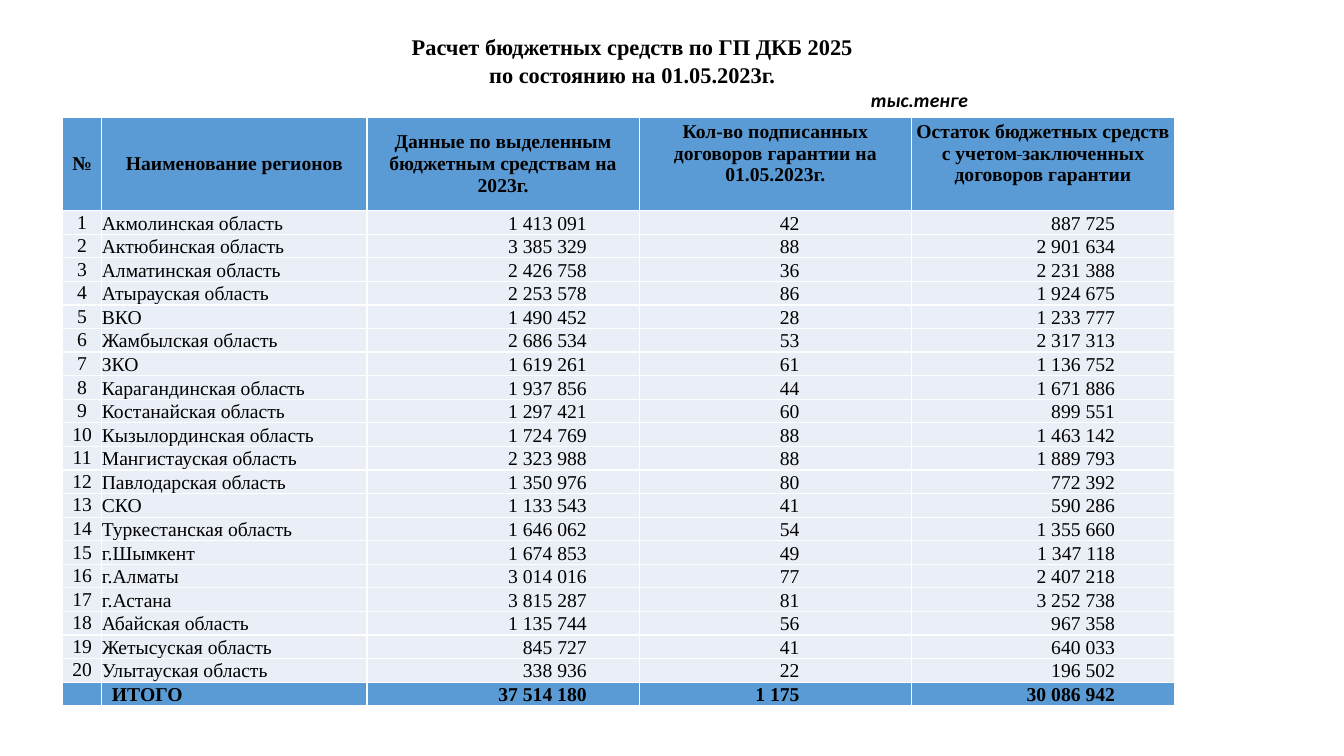
from lxml import etree
from pptx import Presentation
from pptx import util as u
from pptx.dml import color as c
from pptx.enum import text as t
from pptx.oxml import ns

SERIF = "Times New Roman"
BLUE, PALE, WHITE, BLACK = "5B9BD5", "EAEFF7", "FFFFFF", "000000"
LEFT, CENTER, RIGHT = t.PP_ALIGN.LEFT, t.PP_ALIGN.CENTER, t.PP_ALIGN.RIGHT
TOP, MIDDLE, BOTTOM = t.MSO_ANCHOR.TOP, t.MSO_ANCHOR.MIDDLE, t.MSO_ANCHOR.BOTTOM

COLUMNS = [0.39, 2.63, 2.7, 2.7, 2.61]
ALIGNMENTS = [CENTER, LEFT, RIGHT, RIGHT, RIGHT]
RIGHT_INSETS = [0, 0, 0.52, 1.11, 0.59]
HEADER_HEIGHT = 0.93

HEADERS = [
    ["№"],
    ["Наименование регионов"],
    ["Данные по выделенным бюджетным средствам на 2023г."],
    ["Кол-во подписанных договоров гарантии на 01.05.2023г."],
    ["Остаток бюджетных средств с учетом", " ", "заключенных договоров гарантии"],
]
REGIONS = [
    ("Акмолинская область", 1413091, 42, 887725),
    ("Актюбинская область", 3385329, 88, 2901634),
    ("Алматинская область", 2426758, 36, 2231388),
    ("Атырауская область", 2253578, 86, 1924675),
    ("ВКО", 1490452, 28, 1233777),
    ("Жамбылская область", 2686534, 53, 2317313),
    ("ЗКО", 1619261, 61, 1136752),
    ("Карагандинская область", 1937856, 44, 1671886),
    ("Костанайская область", 1297421, 60, 899551),
    ("Кызылординская область", 1724769, 88, 1463142),
    ("Мангистауская область", 2323988, 88, 1889793),
    ("Павлодарская область", 1350976, 80, 772392),
    ("СКО", 1133543, 41, 590286),
    ("Туркестанская область", 1646062, 54, 1355660),
    ("г.Шымкент", 1674853, 49, 1347118),
    ("г.Алматы", 3014016, 77, 2407218),
    ("г.Астана", 3815287, 81, 3252738),
    ("Абайская область", 1135744, 56, 967358),
    ("Жетысуская область", 845727, 41, 640033),
    ("Улытауская область", 338936, 22, 196502),
]
TOTAL = ("ИТОГО", 37514180, 1175, 30086942)


def rgb(value):
    return c.RGBColor.from_string(value)


def add_span(para, words, size=14, font=SERIF, bold=False, italic=False):
    span = para.add_run()
    span.text = words
    span.font.size = u.Pt(size)
    span.font.name = font
    span.font.bold = bold
    span.font.italic = italic
    span.font.color.rgb = rgb(BLACK)
    return span


def place(shape, box):
    shape.left, shape.top, shape.width, shape.height = map(u.Inches, box)


def add_title(page, box):
    title = page.shapes.title
    place(title, box)
    frame = title.text_frame
    frame.word_wrap = True
    frame.auto_size = t.MSO_AUTO_SIZE.NONE
    frame.vertical_anchor = TOP
    para = frame.paragraphs[0]
    para.alignment = CENTER
    para.line_spacing = u.Pt(19.4)
    add_span(para, "Расчет бюджетных средств по ГП ДКБ 2025", 16, bold=True)
    para.add_line_break()
    add_span(para, "по состоянию на 01.05.2023г.", 16, bold=True)


def add_unit(page, box):
    frame = page.shapes.add_textbox(*map(u.Inches, box)).text_frame
    frame.word_wrap = True
    para = frame.paragraphs[0]
    para.alignment = RIGHT
    add_span(para, "тыс.тенге", font="Calibri", bold=True, italic=True)


def style_cell(cell, fill, anchor, left=0, right=0, bottom=0):
    cell.margin_top = 0
    cell.margin_left, cell.margin_right, cell.margin_bottom = map(u.Inches, (left, right, bottom))
    cell.vertical_anchor = anchor
    properties = cell._tc.get_or_add_tcPr()
    for side in ("lnL", "lnR", "lnT", "lnB"):
        line = etree.SubElement(properties, ns.qn(f"a:{side}"), w=str(u.Pt(1)))
        solid = etree.SubElement(line, ns.qn("a:solidFill"))
        etree.SubElement(solid, ns.qn("a:srgbClr"), val=WHITE)
    cell.fill.solid()
    cell.fill.fore_color.rgb = rgb(fill)


def fill_header(table):
    for column, pieces in enumerate(HEADERS):
        cell = table.cell(0, column)
        style_cell(cell, BLUE, MIDDLE, bottom=0.2 if column > 2 else 0)
        para = cell.text_frame.paragraphs[0]
        para.alignment = CENTER
        for piece in pieces:
            span = add_span(para, piece, bold=True)
            if piece == " ":
                span.font._element.set("strike", "sngStrike")


def fill_row(table, row, values, fill, bold=False, indent=0):
    for column, value in enumerate(values):
        cell = table.cell(row, column)
        style_cell(cell, fill, BOTTOM if column else MIDDLE,
                   left=indent if column == 1 else 0, right=RIGHT_INSETS[column])
        para = cell.text_frame.paragraphs[0]
        para.alignment = ALIGNMENTS[column]
        words = f"{value:,}".replace(",", " ") if isinstance(value, int) else value
        if words:
            add_span(para, words, bold=bold)
        else:
            etree.SubElement(para._p, ns.qn("a:endParaRPr"), sz="1400")


def add_budget_table(page, box):
    row_count = len(REGIONS) + 2
    table = page.shapes.add_table(row_count, len(COLUMNS), *map(u.Inches, box)).table
    for column, width in zip(table.columns, COLUMNS):
        column.width = u.Inches(width)
    for row in table.rows:
        row.height = u.Inches((box[3] - HEADER_HEIGHT) / (row_count - 1))
    table.rows[0].height = u.Inches(HEADER_HEIGHT)
    fill_header(table)
    for number, region in enumerate(REGIONS, 1):
        fill_row(table, number, (number, *region), PALE)
    fill_row(table, row_count - 1, ("", *TOTAL), BLUE, bold=True, indent=0.1)


def main():
    deck = Presentation()
    deck.slide_width, deck.slide_height = u.Inches(13.33), u.Inches(7.5)
    page = deck.slides.add_slide(deck.slide_layouts[5])
    add_title(page, (0.42, 0.28, 11.7, 0.64))
    add_unit(page, (8.2, 0.82, 1.5, 0.34))
    add_budget_table(page, (0.62, 1.16, sum(COLUMNS), 5.83))
    deck.save("out.pptx")


if __name__ == "__main__":
    main()
